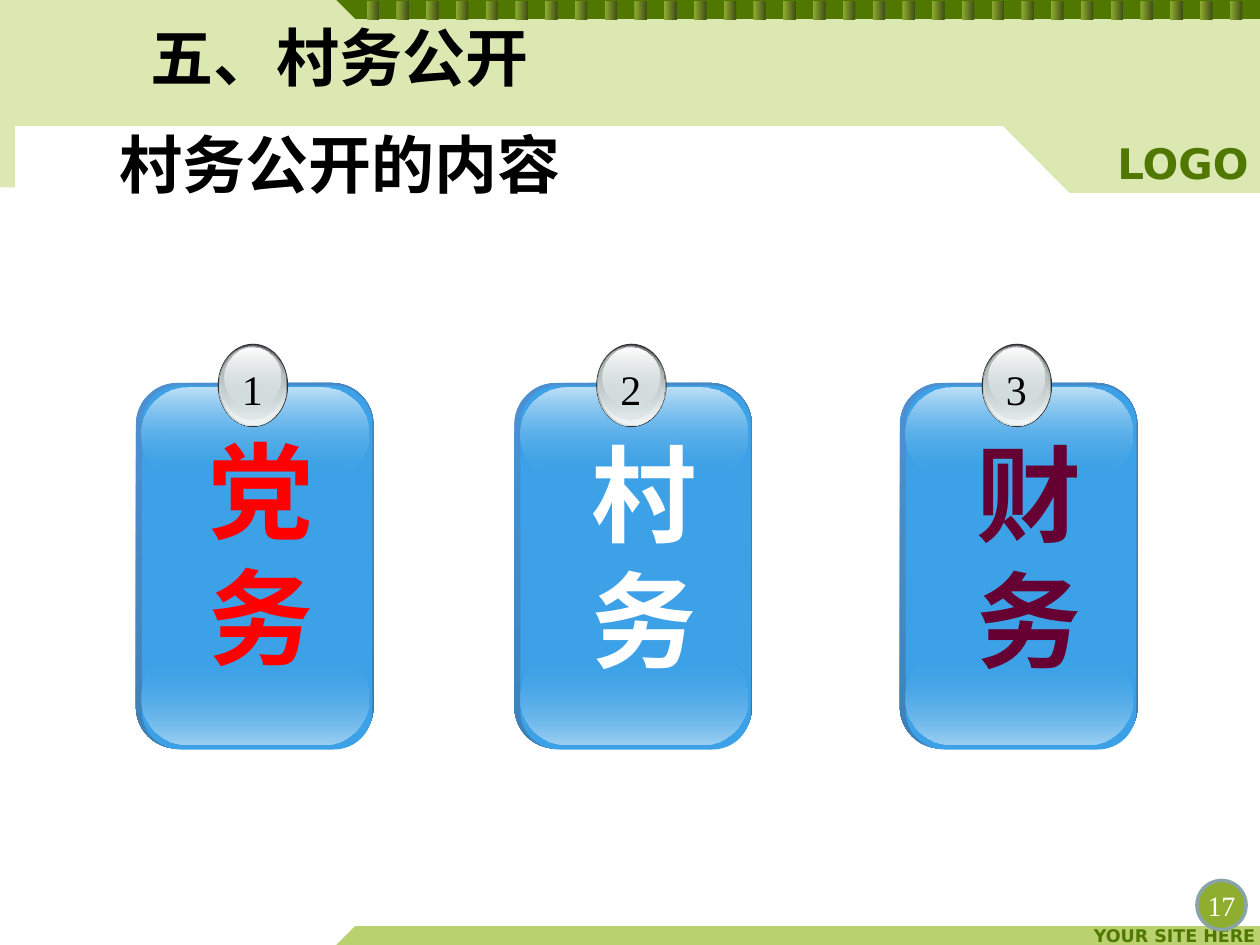
from lxml.etree import SubElement
from pptx import Presentation
from pptx.dml.color import RGBColor
from pptx.enum.shapes import MSO_SHAPE
from pptx.enum.text import MSO_ANCHOR, PP_ALIGN
from pptx.oxml.ns import qn
from pptx.util import Cm, Pt

# Content
TITLE_LINES = ["五、村务公开", "村务公开的内容"]
# number, characters, text colour, card left, text left, text top (cm)
CARDS = [
    ("1", "党务", "red", 2.74, 3.96, 8.46),
    ("2", "村务", "white", 10.37, 11.68, 8.53),
    ("3", "财务", "wine", 18.14, 19.43, 8.53),
]
PAGE_NUMBER = "17"

COLORS = {
    "black": "000000", "white": "FFFFFF", "red": "FF0000", "wine": "660033",
    "pale green": "DBE8B2", "light green": "BAD16F", "dark green": "507800",
    "leaf": "8FAD2F", "moss": "425016", "badge line": "89A4A7",
    "blue": "3CA1E6", "edge light": "4E91D4", "edge dark": "3477A4",
    "shine": "BEE0F7", "glow": "9BCFF2", "charcoal": "333333",
    "steel": "636869", "silver": "D6E1E2", "grey": "AAB2B3", "mist": "F1F5F5",
}
SERIF, SANS = "Times New Roman", "DejaVu Sans"

# Outlines in cm
BANDS = [
    ("light green", [(6.78, 19.05), (7.16, 18.67), (25.4, 18.67), (25.4, 19.05)]),
    ("pale green", [(0, 3.78), (0.3, 3.78), (0.3, 2.54), (20.22, 2.54),
                    (21.56, 3.89), (25.4, 3.89), (25.4, 0), (0, 0)]),
    ("dark green", [(6.78, 0), (7.16, 0.38), (25.4, 0.38), (25.4, 0)]),
]
TICK_COUNT, TICK_LEFT, TICK_STEP = 30, 7.39, 0.6

# Layers of a card: kind, corner, offset from card left, top, width, height, fill.
# A fill is a colour name, or (angle, first stop, last stop); a stop is
# (colour name, opacity in percent).
ROUND, OVAL = MSO_SHAPE.ROUNDED_RECTANGLE, MSO_SHAPE.OVAL
CARD_LAYERS = [
    (ROUND, 0.175, 0, 7.72, 4.79, 7.37, (45, ("edge light", 100), ("edge dark", 100))),
    (ROUND, 0.167, 0.12, 7.77, 4.65, 7.34, "blue"),
    (ROUND, 0.5, 0.12, 7.82, 4.57, 1.85, (90, ("shine", 100), ("blue", 0))),
    (OVAL, None, 1.65, 6.93, 1.42, 1.68, "charcoal"),
    (OVAL, None, 1.67, 6.96, 1.37, 1.63, (90, ("steel", 100), ("silver", 100))),
    (OVAL, None, 1.69, 6.96, 1.35, 1.6, (90, ("silver", 0), ("mist", 100))),
    (OVAL, None, 1.7, 6.99, 1.27, 1.47, (90, ("grey", 100), ("silver", 48))),
    (OVAL, None, 1.78, 7.01, 1.14, 1.19, (90, ("white", 100), ("silver", 38))),
    (ROUND, 0.5, 0.12, 13.16, 4.57, 1.85, (90, ("blue", 0), ("glow", 100))),
]


def rgb(name):
    return RGBColor.from_string(COLORS[name])


def paint(shape, fill):
    """Give a shape a plain or gradient fill, with no line and no shadow."""
    shape.shadow.inherit = False
    shape.line.fill.background()
    if isinstance(fill, str):
        shape.fill.solid()
        shape.fill.fore_color.rgb = rgb(fill)
        return
    angle, *ends = fill
    shape.fill.gradient()
    gradient = shape._element.spPr.find(qn("a:gradFill"))
    for child in list(gradient):
        gradient.remove(child)
    stops = SubElement(gradient, qn("a:gsLst"))
    for position, (name, opacity) in zip((0, 100), ends):
        stop = SubElement(stops, qn("a:gs"), pos=str(position * 1000))
        color = SubElement(stop, qn("a:srgbClr"), val=COLORS[name])
        if opacity < 100:
            SubElement(color, qn("a:alpha"), val=str(opacity * 1000))
    SubElement(gradient, qn("a:lin"), ang=str(angle * 60000), scaled="0")


def add_part(shapes, kind, left, top, width, height, fill, corner=None):
    shape = shapes.add_shape(kind, Cm(left), Cm(top), Cm(width), Cm(height))
    if corner is not None:
        shape.adjustments[0] = corner
    paint(shape, fill)
    return shape


def write(shape, lines, size, color, font=SERIF, bold=False, align=PP_ALIGN.CENTER,
          anchor=MSO_ANCHOR.TOP, insets=(0.25, 0.13), wrap=True, before=0):
    frame = shape.text_frame
    frame.text = "\n".join(lines)
    frame.word_wrap = wrap
    frame.vertical_anchor = anchor
    frame.margin_left = frame.margin_right = Cm(insets[0])
    frame.margin_top = frame.margin_bottom = Cm(insets[1])
    for para in frame.paragraphs:
        para.alignment = align
        para.space_before = Pt(before)
        para.font.size = Pt(size)
        para.font.name = font
        para.font.bold = bold
        para.font.color.rgb = rgb(color)


def add_text(shapes, left, top, width, height, *args, **style):
    box = shapes.add_textbox(Cm(left), Cm(top), Cm(width), Cm(height))
    write(box, *args, **style)


def add_card(page, number, characters, color, left, text_left, text_top):
    shapes = page.shapes.add_group_shape().shapes
    for kind, corner, offset, top, width, height, fill in CARD_LAYERS:
        add_part(shapes, kind, left + offset, top, width, height, fill, corner)
    add_text(shapes, left + 1.88, 7.19, 0.94, 1.27, [number], 24, "black", wrap=False)
    add_text(shapes, text_left, text_top, 2.06, 5.38, characters, 60, color,
             bold=True, align=PP_ALIGN.LEFT)


def main():
    deck = Presentation()
    deck.slide_width, deck.slide_height = Cm(25.4), Cm(19.05)
    page = deck.slides.add_slide(deck.slide_layouts[5])
    shapes = page.shapes

    # Bands at top and bottom, with their labels
    for fill, points in BANDS:
        corners = [(Cm(x), Cm(y)) for x, y in points]
        builder = shapes.build_freeform(*corners[0])
        builder.add_line_segments(corners[1:], close=True)
        paint(builder.convert_to_shape(), fill)
    label = {"font": SANS, "bold": True, "insets": (0.05, 0.03)}
    add_text(shapes, 21.72, 18.62, 3.63, 0.48, ["YOUR SITE HERE"], 10, "dark green",
             align=PP_ALIGN.RIGHT, **label)
    add_text(shapes, 22.25, 2.74, 3.2, 1.09, ["LOGO"], 24, "dark green",
             anchor=MSO_ANCHOR.MIDDLE, **label)

    # Row of ticks on the top band
    ticks = shapes.add_group_shape().shapes
    for index in range(TICK_COUNT):
        add_part(ticks, MSO_SHAPE.RECTANGLE, TICK_LEFT + index * TICK_STEP, 0.03,
                 0.25, 0.38, (0, ("leaf", 100), ("moss", 100)))

    # Title, brought in front of the bands
    title = shapes.title
    title.left, title.top, title.width, title.height = Cm(0.46), Cm(0.25), Cm(12.78), Cm(4.11)
    write(title, TITLE_LINES, 36, "black", bold=True, before=18)
    shapes._spTree.append(title._element)

    # Cards
    for card in CARDS:
        add_card(page, *card)

    # Page number
    badge = add_part(shapes, OVAL, 24.13, 17.75, 0.99, 0.99, "leaf")
    badge.line.color.rgb = rgb("badge line")
    badge.line.width = Pt(2)
    write(badge, [PAGE_NUMBER], 16, "white", anchor=MSO_ANCHOR.MIDDLE,
          insets=(0, 0), wrap=False)

    deck.save("out.pptx")


if __name__ == "__main__":
    main()
